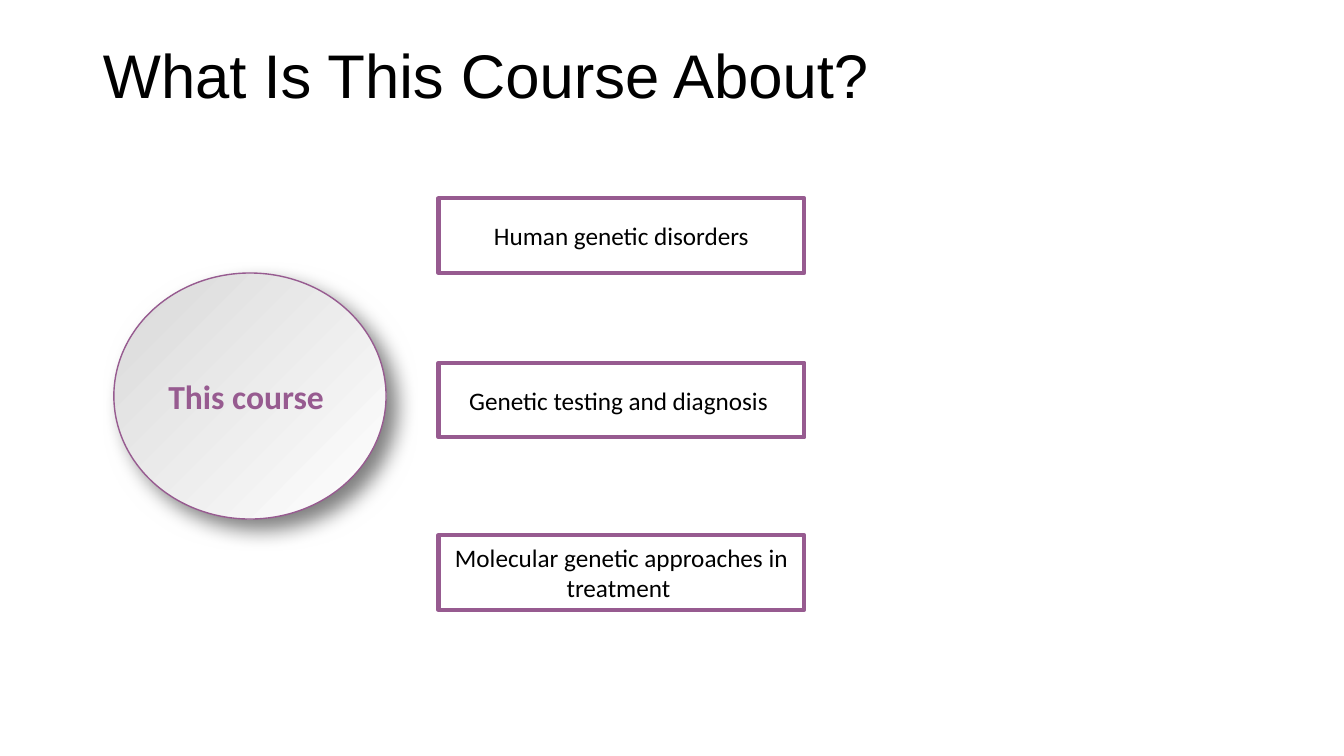
"""Build the slide that introduces the three topics of the course."""
from dataclasses import dataclass

from lxml.etree import SubElement
from pptx import Presentation
from pptx.dml.color import RGBColor
from pptx.enum.shapes import MSO_SHAPE as Preset
from pptx.enum.text import MSO_ANCHOR as Anchor, PP_ALIGN as Align
from pptx.oxml.ns import qn
from pptx.util import Cm, Pt

TITLE = "What Is This Course About?"
COURSE = "This course "
TOPICS = [
    ("Human genetic disorders", 5.0),
    ("Genetic testing and diagnosis ", 9.14),
    ("Molecular genetic approaches in treatment ", 13.49),
]

TITLE_BOX = (2.34, 1.02, 29.21, 3.68)
COURSE_BOX = (2.87, 6.88, 6.86, 6.2)
TOPIC_LEFT, TOPIC_WIDTH, TOPIC_HEIGHT = 11.05, 9.22, 1.88


@dataclass(frozen=True)
class Theme:
    ink: str = "000000"
    accent: str = "975B90"
    light: str = "FFFFFF"
    shade: str = "D9D9D9"
    title_font: str = "Arial"
    body_font: str = "Calibri"
    title_size: int = 44
    course_size: int = 24
    topic_size: int = 18


THEME = Theme()


def color(value):
    return RGBColor.from_string(value)


def write(shape, text, font_name, size, ink, align, anchor, bold=False):
    frame = shape.text_frame
    frame.text = text
    frame.word_wrap = True
    frame.vertical_anchor = anchor
    paragraph = frame.paragraphs[0]
    paragraph.alignment = align
    font = paragraph.runs[0].font
    font.name, font.size, font.bold = font_name, Pt(size), bold
    font.color.rgb = color(ink)


def add_outlined(slide, preset, box, line_width):
    shape = slide.shapes.add_shape(preset, *map(Cm, box))
    shape.shadow.inherit = False
    shape.line.color.rgb = color(THEME.accent)
    shape.line.width = Pt(line_width)
    return shape


def add_shadow(shape, blur, distance, degrees, opacity):
    effects = shape.element.spPr.find(qn("a:effectLst"))
    shadow = SubElement(effects, qn("a:outerShdw"), blurRad=str(Pt(blur)),
                        dist=str(Pt(distance)), dir=str(degrees * 60000),
                        algn="tl", rotWithShape="0")
    tint = SubElement(shadow, qn("a:srgbClr"), val=THEME.ink)
    SubElement(tint, qn("a:alpha"), val=str(opacity * 1000))


def add_title(slide):
    title = slide.shapes.title
    title.left, title.top, title.width, title.height = map(Cm, TITLE_BOX)
    write(title, TITLE, THEME.title_font, THEME.title_size, THEME.ink,
          Align.LEFT, Anchor.TOP)
    title.text_frame.paragraphs[0].line_spacing = 0.9


def add_course(slide):
    course = add_outlined(slide, Preset.OVAL, COURSE_BOX, 1)
    course.fill.gradient()
    course.fill.gradient_angle = 135
    for stop, value in zip(course.fill.gradient_stops, (THEME.light, THEME.shade)):
        stop.color.rgb = color(value)
    add_shadow(course, blur=15, distance=10, degrees=45, opacity=50)
    write(course, COURSE, THEME.body_font, THEME.course_size, THEME.accent,
          Align.CENTER, Anchor.MIDDLE, bold=True)


def add_topics(slide):
    for text, top in TOPICS:
        box = (TOPIC_LEFT, top, TOPIC_WIDTH, TOPIC_HEIGHT)
        topic = add_outlined(slide, Preset.RECTANGLE, box, 3)
        topic.fill.background()
        write(topic, text, THEME.body_font, THEME.topic_size, THEME.ink,
              Align.CENTER, Anchor.MIDDLE)


def main():
    presentation = Presentation()
    presentation.slide_width, presentation.slide_height = Cm(33.87), Cm(19.05)
    slide = presentation.slides.add_slide(presentation.slide_layouts[5])
    add_title(slide)
    add_course(slide)
    add_topics(slide)
    presentation.save("out.pptx")


if __name__ == "__main__":
    main()
